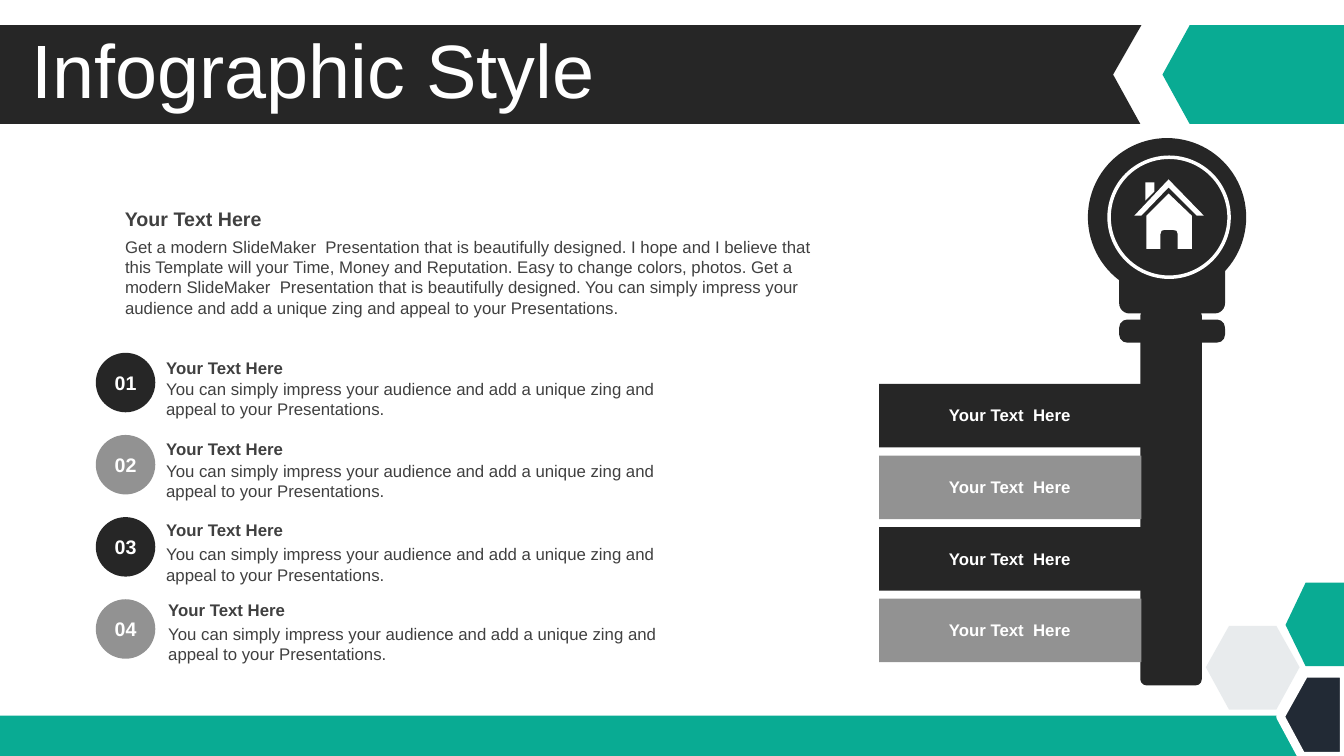
from dataclasses import dataclass

import lxml.etree
import pptx
import pptx.dml.color
import pptx.enum.shapes
import pptx.enum.text
import pptx.oxml.ns
import pptx.util

Inches = pptx.util.Inches
Shape = pptx.enum.shapes.MSO_SHAPE
Align = pptx.enum.text.PP_ALIGN
Anchor = pptx.enum.text.MSO_ANCHOR
AutoSize = pptx.enum.text.MSO_AUTO_SIZE
Point = tuple[float, float]


@dataclass(frozen=True)
class Theme:
    font: str = "Arial"
    dark: str = "262626"
    grey: str = "929292"
    teal: str = "09AB93"
    navy: str = "222A35"
    pale: str = "D9DEE2"
    white: str = "FFFFFF"
    text: str = "404040"
    title_size: int = 54
    heading_size: int = 14
    body_size: int = 12


@dataclass(frozen=True)
class Box:
    left: float
    top: float
    width: float
    height: float

    def lengths(self) -> list[int]:
        return [Inches(v) for v in (self.left, self.top, self.width, self.height)]


@dataclass(frozen=True)
class Outline:
    fill: str
    contours: list[list[Point]]
    border: float = 0
    opacity: int = 100


@dataclass(frozen=True)
class Part:
    kind: int
    box: Box
    fill: str
    border: float = 0
    corner: float | None = None


@dataclass(frozen=True)
class Item:
    number: str
    left: float
    heading_top: float
    detail_top: float
    fill: str


THEME = Theme()
HEADING = "Your Text Here"
BAR_LABEL = "Your Text  Here"
DETAIL = ("You can simply impress your audience and add a unique zing and "
          "appeal to your Presentations.")
INTRO = ("Get a modern SlideMaker  Presentation that is beautifully designed. "
         "I hope and I believe that this Template will your Time, Money and "
         "Reputation. Easy to change colors, photos. Get a modern SlideMaker  "
         "Presentation that is beautifully designed. You can simply impress your "
         "audience and add a unique zing and appeal to your Presentations.")

# Banner and corner hexagons
BACKDROP = [
    Outline(THEME.dark, [[(0, 0.25), (11.32, 0.25), (11.04, 0.74), (11.31, 1.23), (0, 1.23)]]),
    Outline(THEME.pale, [[(11.96, 6.62), (12.19, 6.21), (12.66, 6.21), (12.89, 6.62),
                          (12.66, 7.04), (12.19, 7.04)]], opacity=60),
    Outline(THEME.teal, [[(12.95, 5.78), (13.33, 5.78), (13.33, 6.61), (12.95, 6.61),
                          (12.75, 6.2)]]),
    Outline(THEME.teal, [[(11.8, 0.25), (13.33, 0.25), (13.33, 1.23), (11.8, 1.23),
                          (11.53, 0.74)]]),
]
FOOTER = Part(Shape.RECTANGLE, Box(0, 7.1, 13.33, 0.4), THEME.teal)
NAVY_HEXAGON = Outline(THEME.navy, [[(13.33, 6.68), (13.33, 7.5), (12.91, 7.5), (12.7, 7.11),
                                     (12.94, 6.68)]], border=6)

# Key: head, collar, ring, shaft and the circle round the house
KEY = [
    Part(Shape.OVAL, Box(10.79, 1.37, 1.57, 1.57), THEME.dark),
    Part(Shape.ROUNDED_RECTANGLE, Box(11.1, 2.5, 1.05, 0.61), THEME.dark),
    Part(Shape.ROUNDED_RECTANGLE, Box(11.1, 3.17, 1.05, 0.23), THEME.dark, corner=0.35),
    Part(Shape.ROUNDED_RECTANGLE, Box(11.31, 3.07, 0.61, 3.73), THEME.dark, corner=0.1),
    Part(Shape.OVAL, Box(11, 1.56, 1.19, 1.19), THEME.dark, border=2.5),
]
HOUSE = Outline(THEME.white, [
    [(11.59, 1.92), (11.82, 2.14), (11.82, 2.47), (11.68, 2.47), (11.68, 2.32),
     (11.67, 2.29), (11.63, 2.28), (11.55, 2.28), (11.52, 2.29), (11.51, 2.32),
     (11.51, 2.47), (11.37, 2.47), (11.37, 2.14)],
    [(11.36, 1.81), (11.45, 1.81), (11.45, 1.9), (11.36, 1.99)],
    [(11.59, 1.78), (11.94, 2.14), (11.87, 2.14), (11.59, 1.86), (11.32, 2.14), (11.25, 2.14)],
])

ITEMS = [
    Item("01", 1.55, 3.5, 3.71, THEME.dark),
    Item("02", 1.55, 4.3, 4.52, THEME.grey),
    Item("03", 1.55, 5.11, 5.35, THEME.dark),
    Item("04", 1.57, 5.9, 6.14, THEME.grey),
]


def rgb(colour: str) -> pptx.dml.color.RGBColor:
    return pptx.dml.color.RGBColor.from_string(colour)


def paint(shape, fill: str, border: float = 0) -> None:
    shape.shadow.inherit = False
    shape.fill.solid()
    shape.fill.fore_color.rgb = rgb(fill)
    if border:
        shape.line.color.rgb = rgb(THEME.white)
        shape.line.width = pptx.util.Pt(border)
    else:
        shape.line.fill.background()


def draw_outline(slide, outline: Outline) -> None:
    contours = [[(Inches(x), Inches(y)) for x, y in c] for c in outline.contours]
    builder = slide.shapes.build_freeform(*contours[0][0])
    for index, points in enumerate(contours):
        if index:
            builder.move_to(*points[0])
        builder.add_line_segments(points[1:], close=True)
    shape = builder.convert_to_shape()
    paint(shape, outline.fill, outline.border)
    if outline.opacity < 100:
        colour = shape.element.spPr.find(".//" + pptx.oxml.ns.qn("a:srgbClr"))
        alpha = lxml.etree.SubElement(colour, pptx.oxml.ns.qn("a:alpha"))
        alpha.set("val", str(outline.opacity * 1000))


def draw_part(slide, part: Part):
    shape = slide.shapes.add_shape(part.kind, *part.box.lengths())
    paint(shape, part.fill, part.border)
    if part.corner is not None:
        shape.adjustments[0] = part.corner
    return shape


def write(shape, text: str, size: int, colour: str, bold: bool = False,
          align: int = Align.LEFT, anchor: int = Anchor.TOP):
    frame = shape.text_frame
    frame.word_wrap = True
    frame.vertical_anchor = anchor
    paragraph = frame.paragraphs[0]
    paragraph.alignment = align
    run = paragraph.add_run()
    run.text = text
    run.font.name = THEME.font
    run.font.size = pptx.util.Pt(size)
    run.font.bold = bold
    run.font.color.rgb = rgb(colour)
    return paragraph


def add_label(slide, box: Box, text: str, size: int = THEME.body_size,
              colour: str = THEME.text, bold: bool = False, align: int = Align.LEFT) -> None:
    label = slide.shapes.add_textbox(*box.lengths())
    write(label, text, size, colour, bold, align)
    label.text_frame.auto_size = AutoSize.SHAPE_TO_FIT_TEXT


def place(placeholder, box: Box) -> None:
    placeholder.left, placeholder.top, placeholder.width, placeholder.height = box.lengths()
    placeholder.text_frame.auto_size = AutoSize.NONE


def main() -> None:
    deck = pptx.Presentation()
    deck.slide_width, deck.slide_height = Inches(13.33), Inches(7.5)
    slide = deck.slides.add_slide(deck.slide_layouts[1])
    title, intro = slide.placeholders

    for outline in BACKDROP:
        draw_outline(slide, outline)
    draw_part(slide, FOOTER)
    draw_outline(slide, NAVY_HEXAGON)

    # Title, raised above the banner
    place(title, Box(0.21, 0.34, 10.53, 0.79))
    write(title, "Infographic Style", THEME.title_size, THEME.white,
          anchor=Anchor.MIDDLE).line_spacing = 0.9
    title.element.getparent().append(title.element)

    # Introduction, without the bullet
    add_label(slide, Box(1.14, 2, 7.16, 0.34), HEADING, THEME.heading_size, bold=True)
    place(intro, Box(1.14, 2.3, 7.15, 0.91))
    paragraph = write(intro, INTRO, THEME.body_size, THEME.text)
    paragraph.space_before = pptx.util.Pt(0)
    properties = paragraph.runs[0].font._element.getparent().getparent().get_or_add_pPr()
    properties.set("marL", "0")
    properties.set("indent", "0")
    lxml.etree.SubElement(properties, pptx.oxml.ns.qn("a:buNone"))

    # Key with its four bars
    for part in KEY:
        draw_part(slide, part)
    draw_outline(slide, HOUSE)
    for row, item in enumerate(ITEMS):
        top = 3.81 + 0.71 * row
        draw_part(slide, Part(Shape.RECTANGLE, Box(8.72, top, 2.6, 0.63), item.fill))
        add_label(slide, Box(9.02, top + 0.16, 1.99, 0.3), BAR_LABEL,
                  colour=THEME.white, bold=True, align=Align.CENTER)

    # Numbered list
    for row, item in enumerate(ITEMS):
        badge = draw_part(slide, Part(Shape.OVAL, Box(0.95, 3.5 + 0.815 * row, 0.59, 0.59),
                                      item.fill))
        write(badge, item.number, THEME.heading_size, THEME.white, True,
              Align.CENTER, Anchor.MIDDLE)
        add_label(slide, Box(item.left, item.heading_top, 5.13, 0.3), HEADING, bold=True)
        add_label(slide, Box(item.left, item.detail_top, 5.13, 0.5), DETAIL)

    deck.save("out.pptx")


if __name__ == "__main__":
    main()
